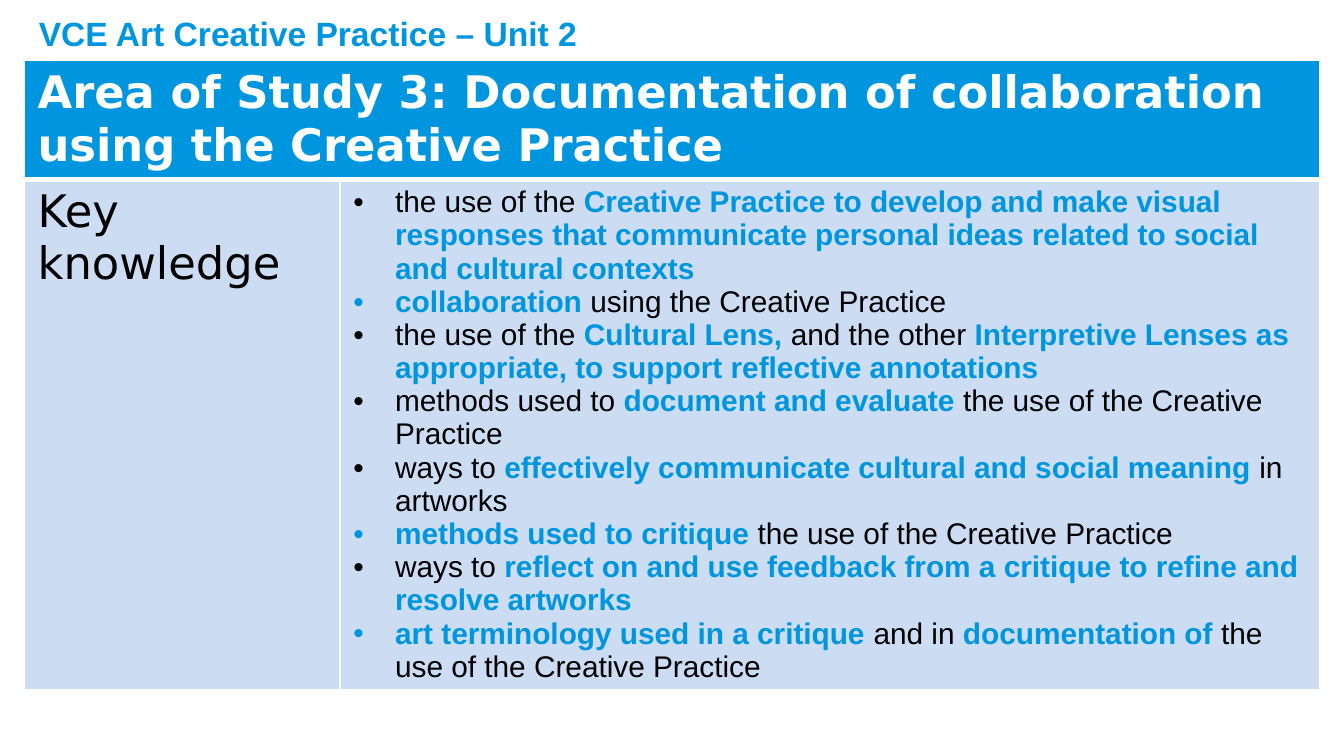
from dataclasses import dataclass

from lxml.etree import SubElement
from pptx import Presentation
from pptx.dml.color import RGBColor as RGB
from pptx.oxml import parse_xml
from pptx.oxml.ns import nsdecls, qn
from pptx.util import Inches, Pt


@dataclass(frozen=True)
class Theme:
    blue: str = "0096DF"
    pale: str = "CCDDF3"
    white: str = "FFFFFF"
    black: str = "000000"
    body_font: str = "Arial"
    head_font: str = "DejaVu Sans"
    head: int = 24
    label: int = 18
    body: int = 16
    indent: float = 0.31


class SlideBuilder:
    def __init__(self, prs, theme):
        self.prs, self.theme = prs, theme
        self.s = prs.slides.add_slide(prs.slide_layouts[6])

    def x(self, share):
        return int(self.prs.slide_width * share)

    def y(self, share):
        return int(self.prs.slide_height * share)

    def run(self, p, text, color, **font):
        r = p.add_run()
        r.text = text
        for name, value in font.items():
            setattr(r.font, name, value)
        r.font.color.rgb = RGB.from_string(color)

    def label(self, text, left, top, width, height, **font):
        box = self.s.shapes.add_textbox(self.x(left), self.y(top), self.x(width), self.y(height))
        tf = box.text_frame
        tf.word_wrap = True
        self.run(tf.paragraphs[0], text, self.theme.blue, **font)

    def table(self, left, top, widths, heights):
        tbl = self.s.shapes.add_table(
            len(heights), len(widths), self.x(left), self.y(top),
            self.x(sum(widths)), self.y(sum(heights))).table
        for col, share in zip(tbl.columns, widths):
            col.width = self.x(share)
        for row, share in zip(tbl.rows, heights):
            row.height = self.y(share)
        return tbl

    def cell(self, cell, fill, **borders):
        cell.fill.solid()
        cell.fill.fore_color.rgb = RGB.from_string(fill)
        tc_pr = cell._tc.get_or_add_tcPr()
        for i, side in enumerate("LRTB"):
            tc_pr.insert(i, parse_xml(
                f'<a:ln{side} {nsdecls("a")} w="{Pt(borders.get(side, 1))}"><a:solidFill>'
                f'<a:srgbClr val="{self.theme.white}"/></a:solidFill></a:ln{side}>'))

    def bullets(self, tf, items):
        """Fill a text frame with bullets; words between asterisks are emphasised."""
        t = self.theme
        for i, item in enumerate(items):
            p = tf.add_paragraph() if i else tf.paragraphs[0]
            p_pr = p._p.get_or_add_pPr()
            p_pr.set("marL", str(Inches(t.indent)))
            p_pr.set("indent", str(-Inches(t.indent)))
            SubElement(p_pr, qn("a:buFont"), typeface=t.body_font)
            SubElement(p_pr, qn("a:buChar"), char="•")
            for n, part in enumerate(item.split("*")):
                if part:
                    strong = n % 2 == 1
                    self.run(p, part, t.blue if strong else t.black,
                             name=t.body_font, size=Pt(t.body), bold=strong)


KEY_KNOWLEDGE = [
    "the use of the *Creative Practice to develop and make visual responses "
    "that communicate personal ideas related to social and cultural contexts*",
    "*collaboration* using the Creative Practice",
    "the use of the *Cultural Lens, *and the other *Interpretive Lenses "
    "as appropriate, to support reflective annotations*",
    "methods used to *document and evaluate *the use of the Creative Practice",
    "ways to *effectively communicate cultural and social meaning *in artworks",
    "*methods used to critique *the use of the Creative Practice",
    "ways to *reflect on and use feedback from a critique to refine and resolve artworks*",
    "*art terminology used in a critique *and in *documentation of *"
    "the use of the Creative Practice",
]


def main():
    prs = Presentation()
    prs.slide_width = Inches(10)
    prs.slide_height = prs.slide_width * 9 // 16
    t = Theme()
    b = SlideBuilder(prs, t)

    # Table: heading across both columns, then topic and details
    tbl = b.table(0.018, 0.08, widths=(0.235, 0.729), heights=(0.157, 0.674))
    heading, topic, details = tbl.cell(0, 0), tbl.cell(1, 0), tbl.cell(1, 1)
    heading.merge(tbl.cell(0, 1))
    for cell in (heading, tbl.cell(0, 1)):
        b.cell(cell, t.blue, B=3)
    for cell in (topic, details):
        b.cell(cell, t.pale, T=3)

    head = dict(name=t.head_font, size=Pt(t.head))
    b.run(heading.text_frame.paragraphs[0],
          "Area of Study 3: Documentation of collaboration using the Creative Practice",
          t.white, bold=True, **head)
    b.run(topic.text_frame.paragraphs[0], "Key knowledge", t.black, bold=False, **head)
    b.bullets(details.text_frame, KEY_KNOWLEDGE)

    # Unit label above the table
    b.label("VCE Art Creative Practice – Unit 2", 0.019, 0.008, 0.921, 0.07,
            name=t.body_font, size=Pt(t.label), bold=True)

    prs.save("out.pptx")


if __name__ == "__main__":
    main()
